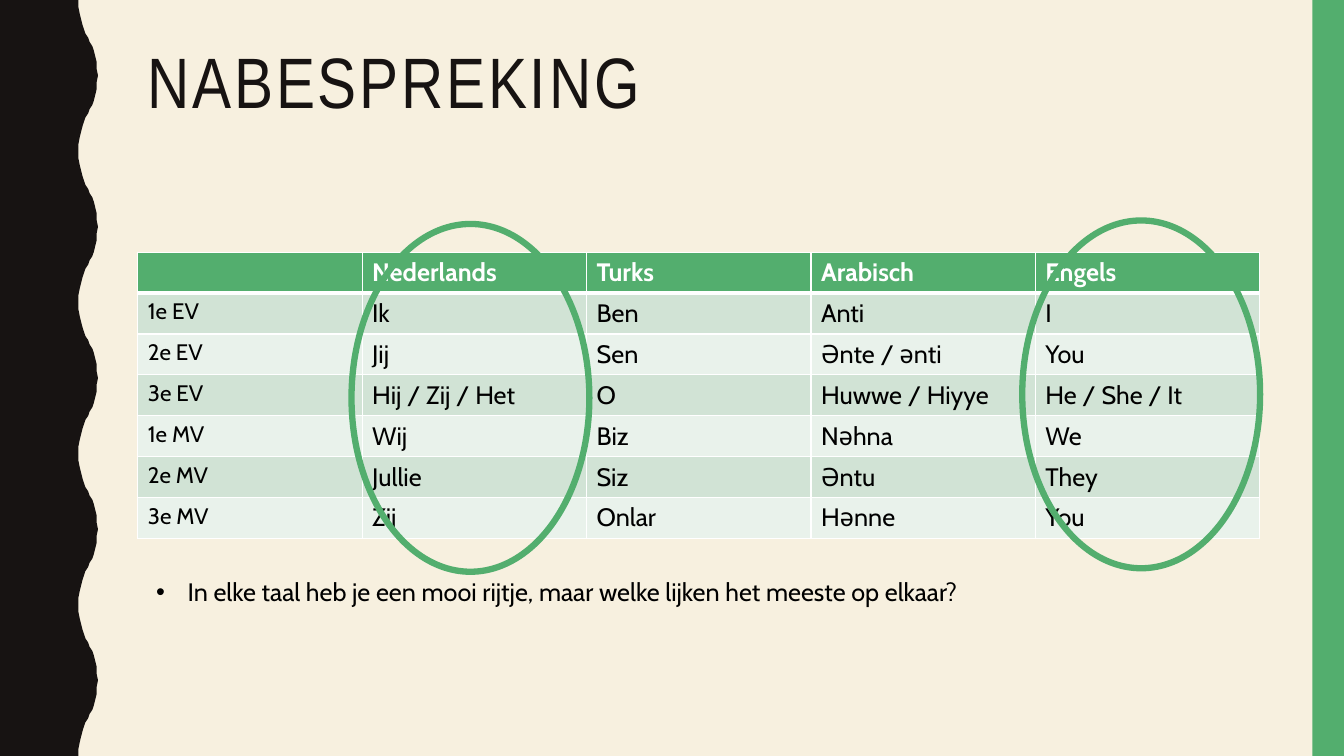
import pptx
import pptx.dml.color
import pptx.enum.shapes
import pptx.oxml
import pptx.oxml.ns
import pptx.util

Pt = pptx.util.Pt

TITLE = "NABESPREKING"
PRONOUNS = [
    ("", "Nederlands", "Turks", "Arabisch", "Engels"),
    ("1e EV", "Ik", "Ben", "Anti", "I"),
    ("2e EV", "Jij", "Sen", "Ənte / ənti", "You"),
    ("3e EV", "Hij / Zij / Het", "O", "Huwwe / Hiyye", "He / She / It"),
    ("1e MV", "Wij", "Biz", "Nəhna", "We"),
    ("2e MV", "Jullie", "Siz", "Əntu", "They"),
    ("3e MV", "Zij", "Onlar", "Hənne", "You"),
]
QUESTION = "In elke taal heb je een mooi rijtje, maar welke lijken het meeste op elkaar?"

COLORS = {
    "cream": "F7F0DF",
    "ink": "171312",
    "green": "53AE6E",
    "dark band": "D1E3D5",
    "light band": "E9F2EB",
    "white": "FFFFFF",
    "black": "000000",
}
TITLE_FONT, BODY_FONT = "Arial Narrow", "Cabin"

SLIDE_WIDTH, SLIDE_HEIGHT = 960, 540
STRIPE_WIDTH = 22.5
TABLE_LEFT, TABLE_TOP = 98.4, 180.2
COLUMN_WIDTH, ROW_HEIGHT = 160.3, 29.2
THIN_BORDER, THICK_BORDER = 0.96, 3
ELLIPSE_WIDTH, ELLIPSE_HEIGHT = 169.9, 248.4
ELLIPSE_CORNERS = [(251.1, 160), (730.2, 157.5)]

# Wave edge from a trough to the next crest
HALF_WAVE = [
    (56.2, 0), (56.3, 5), (56.8, 10), (57.6, 14.4), (58.6, 18), (59.8, 21),
    (61.2, 24), (62.7, 27), (64.2, 30), (65.6, 33), (67, 36), (68.2, 39.6),
    (69, 44), (69.4, 49), (69.6, 54),
]
WAVE_LENGTH, WAVE_COUNT = 108, 5


def rgb(name):
    return pptx.dml.color.RGBColor.from_string(COLORS[name])


def fill_with(target, name):
    target.fill.solid()
    target.fill.fore_color.rgb = rgb(name)


def set_font(paragraph, font_name, size, color, bold=False):
    font = paragraph.font
    font.name, font.size, font.bold = font_name, Pt(size), bold
    font.color.rgb = rgb(color)


def add_text(slide, text, left, top, width, height):
    """Add a wrapping text box and return its paragraph."""
    frame = slide.shapes.add_textbox(Pt(left), Pt(top), Pt(width), Pt(height)).text_frame
    frame.word_wrap = True
    frame.text = text
    return frame.paragraphs[0]


def add_wave(slide):
    wave = HALF_WAVE + [(x, WAVE_LENGTH - y) for x, y in HALF_WAVE[-2::-1]]
    edge = [(x, y + WAVE_LENGTH * number) for number in range(WAVE_COUNT) for x, y in wave]
    builder = slide.shapes.build_freeform(0, 0, scale=Pt(1))
    builder.add_line_segments(edge + [(0, SLIDE_HEIGHT)], close=True)
    shape = builder.convert_to_shape()
    shape.shadow.inherit = False
    fill_with(shape, "ink")
    shape.line.fill.background()


def add_stripe(slide):
    stripe = slide.shapes.add_shape(
        pptx.enum.shapes.MSO_SHAPE.RECTANGLE,
        Pt(SLIDE_WIDTH - STRIPE_WIDTH), 0, Pt(STRIPE_WIDTH), Pt(SLIDE_HEIGHT))
    stripe.shadow.inherit = False
    fill_with(stripe, "green")
    stripe.line.fill.background()


def set_borders(cell, top, bottom):
    sides = [("lnL", THIN_BORDER), ("lnR", THIN_BORDER), ("lnT", top), ("lnB", bottom)]
    properties = cell._tc.get_or_add_tcPr()
    for position, (side, width) in enumerate(sides):
        line = pptx.oxml.parse_xml(
            f'<a:{side} {pptx.oxml.ns.nsdecls("a")} w="{Pt(width)}"><a:solidFill>'
            f'<a:srgbClr val="{COLORS["white"]}"/></a:solidFill></a:{side}>')
        properties.insert(position, line)


def add_pronoun_table(slide):
    rows, columns = len(PRONOUNS), len(PRONOUNS[0])
    table = slide.shapes.add_table(
        rows, columns, Pt(TABLE_LEFT), Pt(TABLE_TOP),
        Pt(COLUMN_WIDTH * columns), Pt(ROW_HEIGHT * rows)).table
    for column in table.columns:
        column.width = Pt(COLUMN_WIDTH)
    for row_index, words in enumerate(PRONOUNS):
        table.rows[row_index].height = Pt(ROW_HEIGHT)
        header = row_index == 0
        band = "green" if header else "dark band" if row_index % 2 else "light band"
        for column_index, word in enumerate(words):
            cell = table.cell(row_index, column_index)
            cell.text = word
            fill_with(cell, band)
            set_borders(cell, THICK_BORDER if row_index == 1 else THIN_BORDER,
                        THICK_BORDER if header else THIN_BORDER)
            set_font(cell.text_frame.paragraphs[0], BODY_FONT,
                     18 if column_index else 16, "white" if header else "black", header)


def add_question(slide):
    paragraph = add_text(slide, QUESTION, 104.4, 408.2, 795.6, 29)
    set_font(paragraph, BODY_FONT, 18, "black")
    properties = paragraph._p.get_or_add_pPr()
    properties.set("marL", str(Pt(22.5)))
    properties.set("indent", str(Pt(-22.5)))
    bullet_parts = ['<a:buClr {}><a:srgbClr val="' + COLORS["black"] + '"/></a:buClr>',
                    '<a:buFont {} typeface="Arial"/>',
                    '<a:buChar {} char="•"/>']
    for position, part in enumerate(bullet_parts):
        properties.insert(position, pptx.oxml.parse_xml(
            part.format(pptx.oxml.ns.nsdecls("a"))))


def add_ellipse(slide, left, top):
    ellipse = slide.shapes.add_shape(
        pptx.enum.shapes.MSO_SHAPE.OVAL,
        Pt(left), Pt(top), Pt(ELLIPSE_WIDTH), Pt(ELLIPSE_HEIGHT))
    ellipse.shadow.inherit = False
    ellipse.fill.background()
    ellipse.line.color.rgb = rgb("green")
    ellipse.line.width = Pt(4.5)


def main():
    presentation = pptx.Presentation()
    presentation.slide_width, presentation.slide_height = Pt(SLIDE_WIDTH), Pt(SLIDE_HEIGHT)
    slide = presentation.slides.add_slide(presentation.slide_layouts[6])
    fill_with(slide.background, "cream")

    add_wave(slide)
    add_stripe(slide)

    title = add_text(slide, TITLE, 98.4, 30.2, 801.6, 117.4)
    title.line_spacing = 0.9
    set_font(title, TITLE_FONT, 51, "ink")
    title.runs[0]._r.get_or_add_rPr().set("spc", "200")

    add_pronoun_table(slide)
    add_question(slide)
    for left, top in ELLIPSE_CORNERS:
        add_ellipse(slide, left, top)

    presentation.save("out.pptx")


if __name__ == "__main__":
    main()
